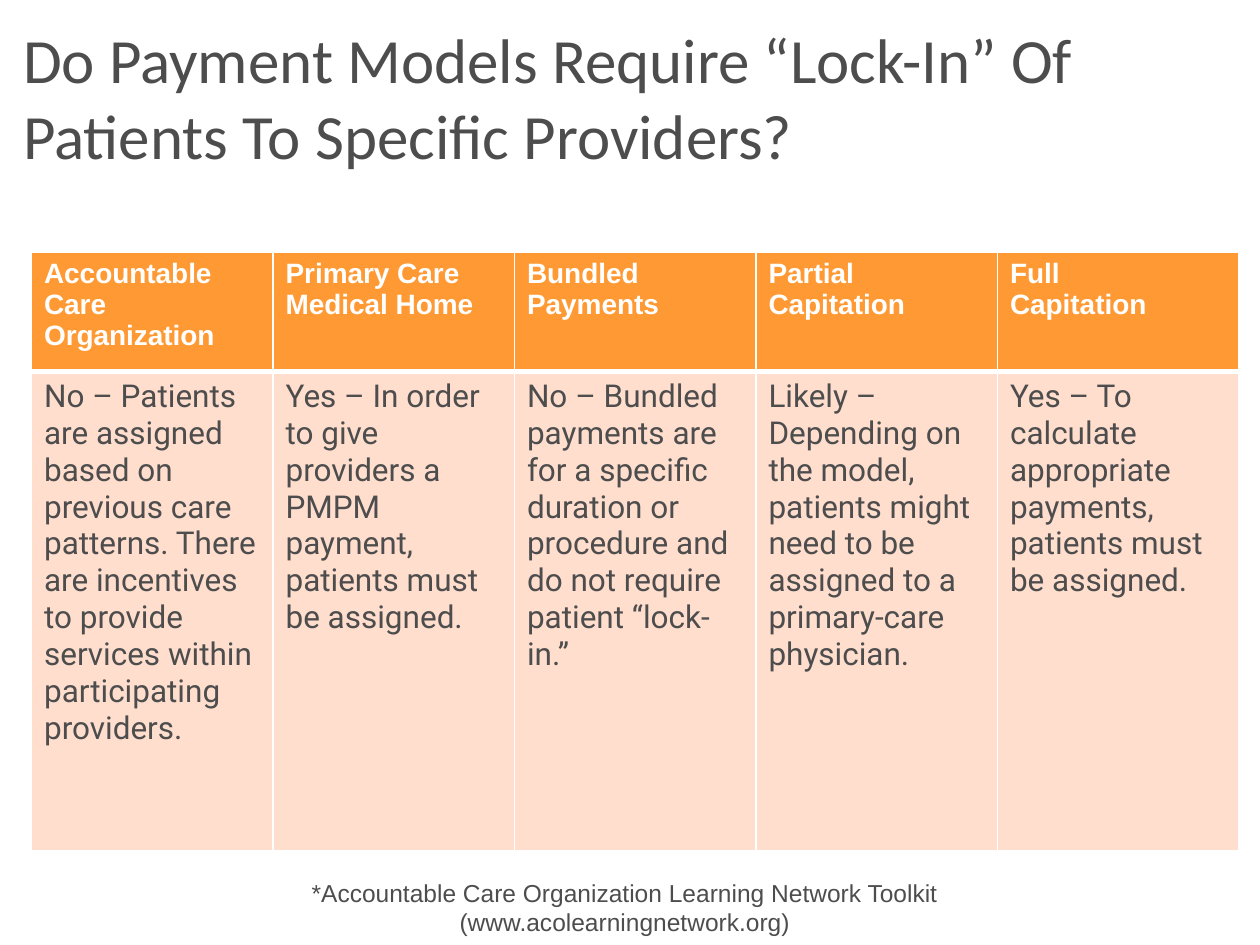
from lxml import etree
from pptx import Presentation
from pptx.dml.color import RGBColor
from pptx.enum.text import MSO_ANCHOR, MSO_AUTO_SIZE, PP_ALIGN
from pptx.oxml.ns import qn
from pptx.util import Pt

LEFT, CENTER = PP_ALIGN.LEFT, PP_ALIGN.CENTER
MIDDLE = MSO_ANCHOR.MIDDLE
NO_AUTOFIT = MSO_AUTO_SIZE.NONE
GRAY = RGBColor(0x4D, 0x4D, 0x4D)
WHITE = RGBColor(0xFF, 0xFF, 0xFF)
ORANGE = RGBColor(0xFF, 0x99, 0x33)
PEACH = RGBColor(0xFF, 0xDE, 0xCE)


def add_run(paragraph, text, font_name, size, color, bold=False):
    run = paragraph.add_run()
    run.text = text
    run.font.name = font_name
    run.font.size = Pt(size)
    run.font.bold = bold
    run.font.color.rgb = color


def set_border(cell, side, width):
    properties = cell._tc.get_or_add_tcPr()
    line = etree.SubElement(properties, qn(f"a:{side}"), w=str(Pt(width)))
    fill = etree.SubElement(line, qn("a:solidFill"))
    etree.SubElement(fill, qn("a:srgbClr"), val=str(WHITE))


presentation = Presentation()
presentation.slide_width = Pt(720)
presentation.slide_height = Pt(540)
slide = presentation.slides.add_slide(presentation.slide_layouts[5])

title = slide.shapes.title
title.left, title.top, title.width, title.height = Pt(6), Pt(27), Pt(696), Pt(56)
title.text_frame.auto_size = NO_AUTOFIT
title.text_frame.vertical_anchor = MIDDLE
title_paragraph = title.text_frame.paragraphs[0]
title_paragraph.alignment = LEFT
add_run(
    title_paragraph,
    "Do Payment Models Require “Lock-In” Of Patients To Specific Providers?",
    "Calibri", 36, GRAY,
)

payment_models = [
    (["Accountable Care Organization"],
     "No – Patients are assigned based on previous care patterns. There are "
     "incentives to provide services within participating providers."),
    (["Primary Care Medical Home"],
     "Yes – In order to give providers a PMPM payment, patients must be assigned."),
    (["Bundled Payments"],
     "No – Bundled payments are for a specific duration or procedure and do not "
     "require patient “lock-in.”"),
    (["Partial", "Capitation"],
     "Likely – Depending on the model, patients might need to be assigned to a "
     "primary-care physician."),
    (["Full", "Capitation"],
     "Yes – To calculate appropriate payments, patients must be assigned."),
]

table = slide.shapes.add_table(
    2, len(payment_models), Pt(18), Pt(144), Pt(690), Pt(342)
).table
table.rows[0].height = Pt(68.4)
table.rows[1].height = Pt(273.6)

for column, (heading_lines, answer) in enumerate(payment_models):
    table.columns[column].width = Pt(138)
    cell_styles = [
        (heading_lines, "Arial", 16, WHITE, True, ORANGE),
        ([answer], "Roboto", 18, GRAY, False, PEACH),
    ]
    for row, (lines, font_name, size, color, bold, background) in enumerate(cell_styles):
        cell = table.cell(row, column)
        for index, line in enumerate(lines):
            if index:
                paragraph = cell.text_frame.add_paragraph()
            else:
                paragraph = cell.text_frame.paragraphs[0]
            add_run(paragraph, line, font_name, size, color, bold)
        for side in ("lnL", "lnR"):
            set_border(cell, side, 1)
        set_border(cell, "lnT", 3 if row else 1)
        set_border(cell, "lnB", 1 if row else 3)
        cell.fill.solid()
        cell.fill.fore_color.rgb = background

source_note = slide.shapes.add_textbox(Pt(96), Pt(498), Pt(522), Pt(41))
source_note.text_frame.word_wrap = True
note_paragraph = source_note.text_frame.paragraphs[0]
note_paragraph.alignment = CENTER
add_run(
    note_paragraph,
    "*Accountable Care Organization Learning Network Toolkit (www.acolearningnetwork.org)",
    "Arial", 14, GRAY,
)

presentation.save("out.pptx")
